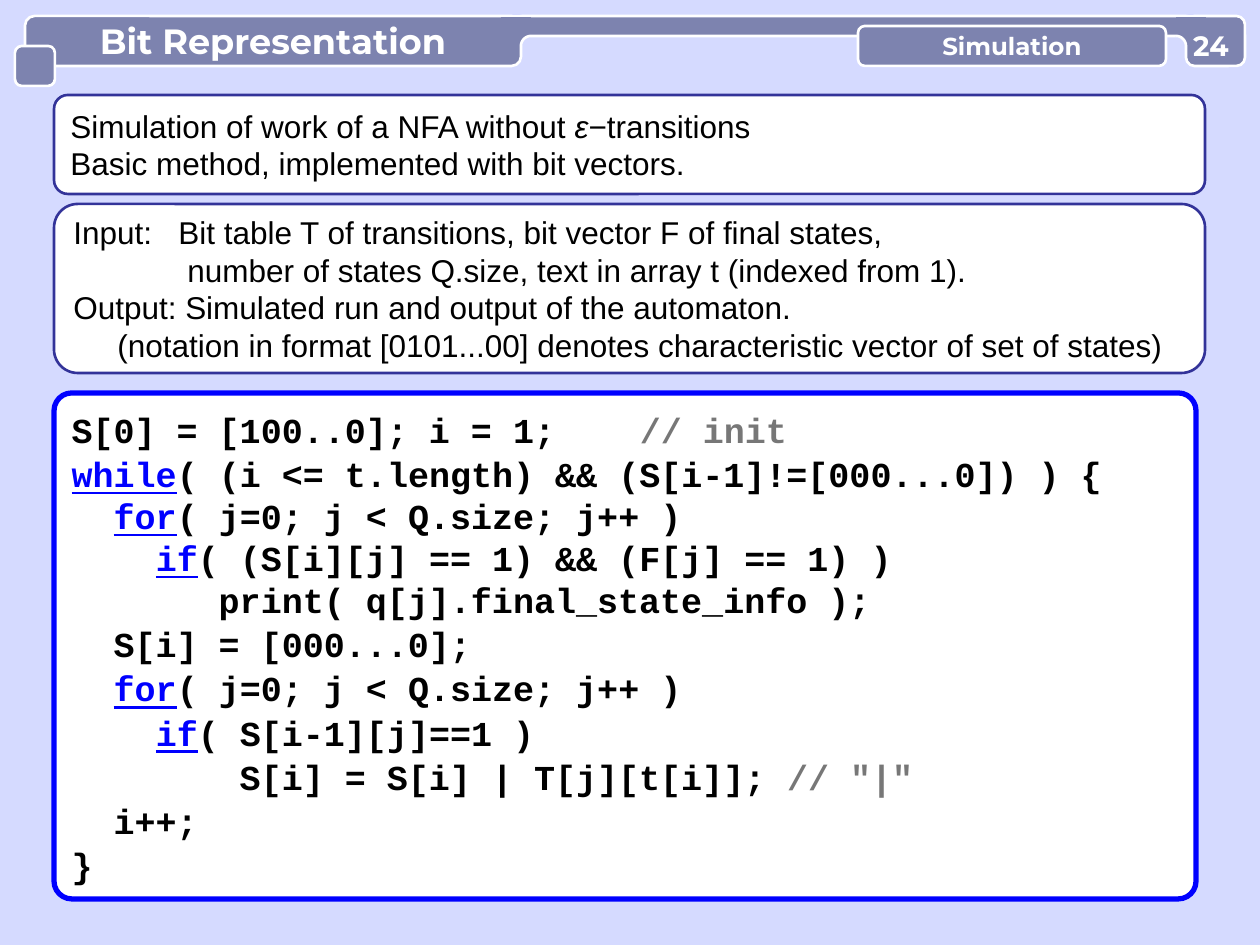
"""Build the slide on simulating an NFA with bit vectors."""
import math

from lxml import etree
from pptx import Presentation
from pptx.dml.color import RGBColor
from pptx.enum.shapes import MSO_CONNECTOR, MSO_SHAPE
from pptx.enum.text import MSO_ANCHOR, PP_ALIGN
from pptx.oxml.ns import qn
from pptx.util import Pt

STRAIGHT = MSO_CONNECTOR.STRAIGHT
ROUNDED, RECTANGLE = MSO_SHAPE.ROUNDED_RECTANGLE, MSO_SHAPE.RECTANGLE
MIDDLE = MSO_ANCHOR.MIDDLE
LEFT, CENTER = PP_ALIGN.LEFT, PP_ALIGN.CENTER
SCALE = 914400 / 126
COLORS = {
    "background": "D5DAFF", "bar": "7D83AF", "white": "FFFFFF", "black": "000000",
    "frame": "333399", "blue": "0000FF", "comment": "777777",
}

KEYWORD = {"color": "blue", "underline": True}
COMMENT = {"color": "comment"}
CODE = [
    [("S[0] = [100..0]; i = 1;    ", {}), ("// init", COMMENT)],
    [("while", KEYWORD), ("( (i <= t.length) && (S[i-1]!=[000...0]) ) {", {})],
    [("  ", {}), ("for", KEYWORD), ("( j=0; j < Q.size; j++ )", {})],
    [("    ", {}), ("if", KEYWORD), ("( (S[i][j] == 1) && (F[j] == 1) )", {})],
    [("       print( q[j].final_state_info );", {})],
    [("  S[i] = [000...0];", {})],
    [("  ", {}), ("for", KEYWORD), ("( j=0; j < Q.size; j++ )", {})],
    [("    ", {}), ("if", KEYWORD), ("( S[i-1][j]==1 )", {})],
    [("        S[i] = S[i] | T[j][t[i]]; ", {}), ("// \"|\"", COMMENT)],
    [("  i++;", {})],
    [("}", {})],
]
CODE_SPACING = [1 if row in (2, 3, 4) else 1.05 for row in range(len(CODE))]
SUMMARY = [
    [("Simulation of work of a NFA without ", {}), ("ε", {"italic": True}),
     ("−transitions", {})],
    [("Basic method, implemented with bit vectors.", {})],
]
INTERFACE = [
    [("Input:\tBit table T of transitions, bit vector F of final states,", {})],
    [("number of states Q.size, text in array t (indexed from 1).", {})],
    [("Output: Simulated run and output of the automaton.", {})],
    [("(notation in format [0101...00] denotes characteristic vector of set of states)", {})],
]
INTERFACE_INDENTS = [(105, -105), (114, 0), (0, 0), (44, 0)]
TITLE, TOPIC, PAGE = [[[(words, {})]] for words in ("Bit Representation", "Simulation", "24")]
HEADING = {"font": "Montserrat", "color": "white", "bold": True}


def px(value):
    return round(value * SCALE)


def rgb(name):
    return RGBColor.from_string(COLORS[name])


def paint(shape, fill=None, line=None, width=1.5):
    shape.shadow.inherit = False
    if fill:
        shape.fill.solid()
        shape.fill.fore_color.rgb = rgb(fill)
    else:
        shape.fill.background()
    if line:
        shape.line.color.rgb = rgb(line)
        shape.line.width = Pt(width)
    else:
        shape.line.fill.background()


def add_box(shapes, box, kind=ROUNDED, corner=None, fill="bar", line="white", width=1.5):
    shape = shapes.add_shape(kind, *map(px, box))
    if corner is not None:
        shape.adjustments[0] = corner
    paint(shape, fill, line, width)
    return shape


def write(shape, paragraphs, font="Arial", size=18, color="black", bold=False,
          align=LEFT, spacings=None, indents=None):
    frame = shape.text_frame
    frame.word_wrap = False
    frame.vertical_anchor = MIDDLE
    for index, runs in enumerate(paragraphs):
        paragraph = frame.add_paragraph() if index else frame.paragraphs[0]
        paragraph.alignment = align
        if spacings:
            paragraph.line_spacing = spacings[index]
        if indents:
            margin, first = indents[index]
            properties = paragraph._p.get_or_add_pPr()
            properties.set("marL", str(px(margin)))
            properties.set("indent", str(px(first)))
        for words, style in runs:
            run = paragraph.add_run()
            run.text = words
            run.font.name = font
            run.font.size = Pt(size)
            run.font.bold = bold
            run.font.italic = style.get("italic", False)
            run.font.underline = style.get("underline", False)
            run.font.color.rgb = rgb(style.get("color", color))


def add_polyline(shapes, points, closed):
    start, *rest = [(px(x), px(y)) for x, y in points]
    builder = shapes.build_freeform(*start)
    builder.add_line_segments(rest, close=closed)
    return builder.convert_to_shape()


def add_fillet(slide, block_left, center_x, side, center_y=46, radius=10, top=16, size=30):
    shapes = slide.shapes.add_group_shape().shapes
    add_box(shapes, (block_left, top, size, size), kind=RECTANGLE, line=None)
    edge = shapes.add_connector(STRAIGHT, *map(px, (block_left, top, block_left + size, top)))
    edge.line.color.rgb = rgb("white")
    edge.line.width = Pt(1.5)
    etree.SubElement(edge._element.spPr, qn("a:effectLst"))
    angles = [math.radians(step * 7.5) for step in range(13)]
    arc = [(center_x + side * radius * math.sin(angle), center_y - radius * math.cos(angle))
           for angle in angles]
    paint(add_polyline(shapes, arc + [(center_x, center_y)], True), fill="background")
    paint(add_polyline(shapes, arc, False), line="white")


def main():
    presentation = Presentation()
    presentation.slide_width, presentation.slide_height = px(1260), px(945)
    slide = presentation.slides.add_slide(presentation.slide_layouts[6])
    slide.background.fill.solid()
    slide.background.fill.fore_color.rgb = rgb("background")
    shapes = slide.shapes

    code = add_box(shapes, (54, 393, 1142, 506), corner=0.035, fill="white", line="blue", width=3)
    write(code, CODE, font="Courier New", size=20, bold=True, spacings=CODE_SPACING)
    panel = {"corner": 0.14, "fill": "white", "line": "frame"}
    write(add_box(shapes, (54, 95, 1151, 99), **panel), SUMMARY)
    write(add_box(shapes, (54, 204, 1151, 169), **panel), INTERFACE, indents=INTERFACE_INDENTS)

    title = add_box(shapes, (25, 16, 496, 50), corner=0.19)
    write(title, TITLE, size=20, align=CENTER, **HEADING)
    add_box(shapes, (512, 16, 684, 20), corner=0.5)
    add_fillet(slide, block_left=501, center_x=531, side=-1)
    add_box(shapes, (15, 46, 40, 40), corner=0.17)
    add_box(shapes, (1186, 16, 59, 50), corner=0.17)
    add_fillet(slide, block_left=1176, center_x=1176, side=1)
    topic = add_box(shapes, (858, 26, 308, 40), corner=0.17)
    write(topic, TOPIC, size=14, align=CENTER, **HEADING)

    page = shapes.add_textbox(*map(px, (1186, 28, 50, 34)))
    frame = page.text_frame
    frame.margin_left = frame.margin_right = frame.margin_top = frame.margin_bottom = 0
    write(page, PAGE, size=16, align=CENTER, **HEADING)


    presentation.save("out.pptx")


if __name__ == "__main__":
    main()
